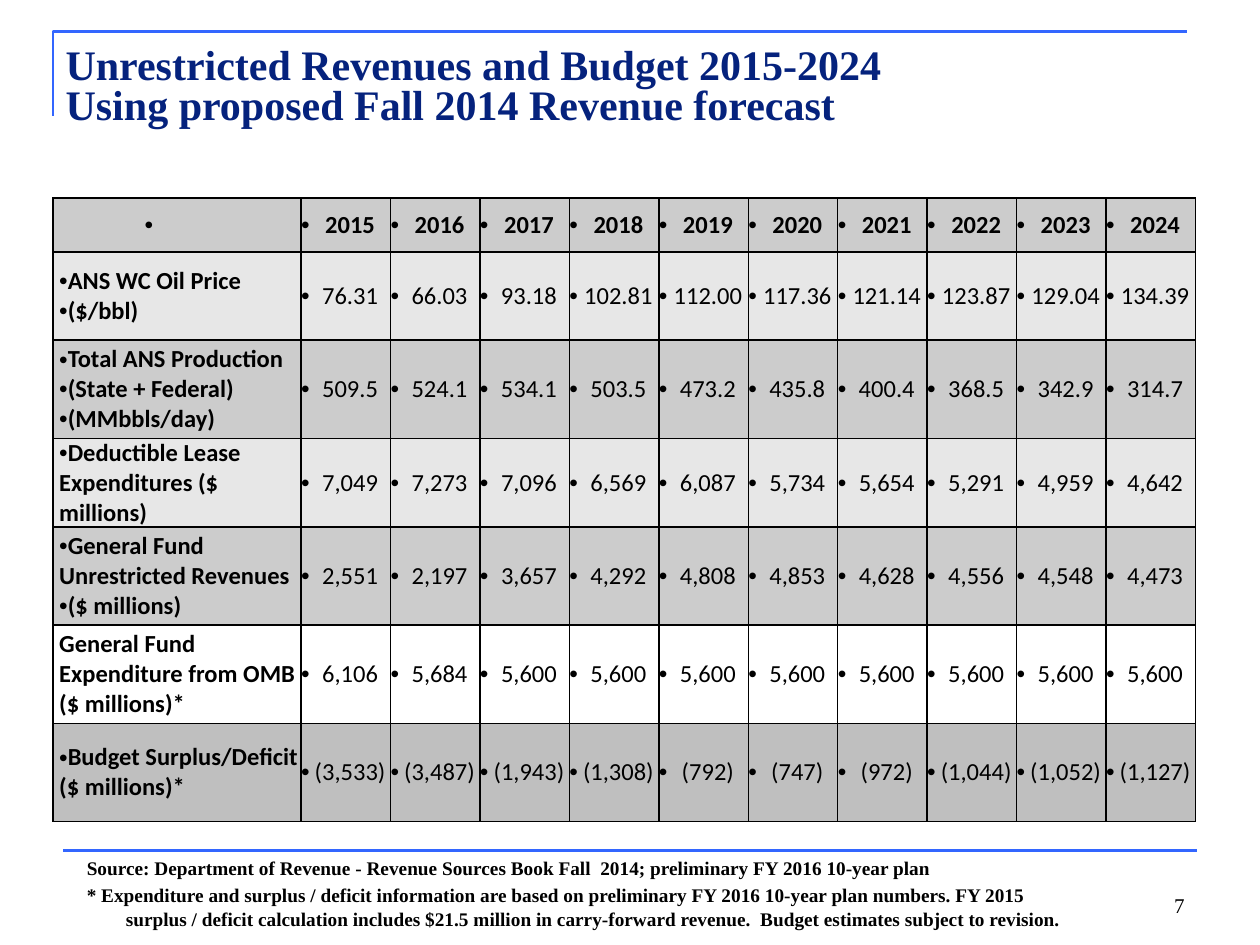
from lxml import etree
from pptx import Presentation
from pptx import util as u
from pptx.dml.color import RGBColor
from pptx.enum import text
from pptx.oxml import ns

BLUE = RGBColor(0x33, 0x66, 0xFF)
NAVY = RGBColor(0x05, 0x22, 0x7D)
BLACK = RGBColor(0, 0, 0)
WHITE = RGBColor(255, 255, 255)
LIGHT = RGBColor(0xE7, 0xE7, 0xE7)
GRAY = RGBColor(0xCC, 0xCC, 0xCC)
DARK = RGBColor(0xBF, 0xBF, 0xBF)

TITLE = "Unrestricted Revenues and Budget 2015-2024\nUsing proposed Fall 2014 Revenue forecast"
NOTES = (
    "Source: Department of Revenue - Revenue Sources Book Fall  2014; preliminary FY 2016 10-year plan\n"
    "* Expenditure and surplus / deficit information are based on preliminary FY 2016 10-year plan numbers. "
    "FY 2015 surplus / deficit calculation includes $21.5 million in carry-forward revenue.  "
    "Budget estimates subject to revision."
)
BUDGET_ROWS = [
    (" ", "2015 2016 2017 2018 2019 2020 2021 2022 2023 2024", GRAY, 0.43),
    ("ANS WC Oil Price\n($/bbl)",
     "76.31 66.03 93.18 102.81 112.00 117.36 121.14 123.87 129.04 134.39", LIGHT, 0.7),
    ("Total ANS Production\n(State + Federal)\n(MMbbls/day)",
     "509.5 524.1 534.1 503.5 473.2 435.8 400.4 368.5 342.9 314.7", GRAY, 0.78),
    ("Deductible Lease Expenditures ($ millions)",
     "7,049 7,273 7,096 6,569 6,087 5,734 5,654 5,291 4,959 4,642", LIGHT, 0.7),
    ("General Fund Unrestricted Revenues\n($ millions)",
     "2,551 2,197 3,657 4,292 4,808 4,853 4,628 4,556 4,548 4,473", GRAY, 0.78),
    ("General Fund Expenditure from OMB\n($ millions)*",
     "6,106 5,684 5,600 5,600 5,600 5,600 5,600 5,600 5,600 5,600", WHITE, 0.78),
    ("Budget Surplus/Deficit\v($ millions)*",
     "(3,533) (3,487) (1,943) (1,308) (792) (747) (972) (1,044) (1,052) (1,127)", DARK, 0.78),
]
EXPENDITURE_ROW = 5


class BudgetSlide:
    """Holds the style and the current slide, with one method per kind of element."""

    serif = "Times New Roman"
    sans = "Calibri"

    def __init__(self, deck):
        self.slide = deck.slides.add_slide(deck.slide_layouts[5])

    def style(self, paragraph, font, size, color=BLACK, bold=False, align=text.PP_ALIGN.LEFT):
        paragraph.alignment = align
        for run in paragraph.runs:
            run.font.name = font
            run.font.size = u.Pt(size)
            run.font.bold = bold
            run.font.color.rgb = color

    def indent(self, paragraph, left, first):
        properties = paragraph._p.get_or_add_pPr()
        properties.set("marL", str(u.Inches(left)))
        properties.set("indent", str(u.Inches(first)))
        return properties

    def bullet(self, paragraph, first):
        properties = self.indent(paragraph, 0, first)
        etree.SubElement(properties, ns.qn("a:buFont"), typeface="Arial")
        etree.SubElement(properties, ns.qn("a:buChar"), char="•")

    def title(self, wording, left, top, width, height):
        heading = self.slide.shapes.title
        heading.left, heading.top = u.Inches(left), u.Inches(top)
        heading.width, heading.height = u.Inches(width), u.Inches(height)
        frame = heading.text_frame
        frame.text = wording
        frame.vertical_anchor = text.MSO_ANCHOR.TOP
        frame.auto_size = text.MSO_AUTO_SIZE.SHAPE_TO_FIT_TEXT
        for paragraph in frame.paragraphs:
            self.style(paragraph, self.serif, 24, NAVY, True)
            paragraph.line_spacing = 0.8
            paragraph.space_before = u.Pt(0)

    def corner(self, left, top, right, bottom):
        builder = self.slide.shapes.build_freeform(u.Inches(left), u.Inches(bottom))
        points = [(left, top), (right, top)]
        builder.add_line_segments([(u.Inches(x), u.Inches(y)) for x, y in points], close=False)
        bracket = builder.convert_to_shape()
        bracket.shadow.inherit = False
        bracket.fill.background()
        self.stroke(bracket)

    def rule(self, left, right, y):
        line = self.slide.shapes.add_connector(1, u.Inches(left), u.Inches(y), u.Inches(right), u.Inches(y))
        etree.SubElement(line._element.spPr, ns.qn("a:effectLst"))
        self.stroke(line)

    def stroke(self, shape):
        shape.line.color.rgb = BLUE
        shape.line.width = u.Pt(1.5)

    def textbox(self, wording, left, top, width, height):
        box = self.slide.shapes.add_textbox(*map(u.Inches, (left, top, width, height)))
        frame = box.text_frame
        frame.word_wrap = True
        frame.text = wording
        return frame

    def footnotes(self, wording, *place):
        frame = self.textbox(wording, *place)
        frame.auto_size = text.MSO_AUTO_SIZE.SHAPE_TO_FIT_TEXT
        for paragraph in frame.paragraphs:
            self.style(paragraph, self.serif, 11, bold=True)
            self.indent(paragraph, 0.4, -0.31)
            paragraph.space_before = u.Pt(2.2)

    def page_number(self, number, *place):
        frame = self.textbox(number, *place)
        frame.vertical_anchor = text.MSO_ANCHOR.BOTTOM
        self.style(frame.paragraphs[0], self.serif, 12, align=text.PP_ALIGN.RIGHT)

    def cell(self, cell, wording, fill, bold, align, first=None, left=0.0):
        cell.text_frame.text = wording
        cell.vertical_anchor = text.MSO_ANCHOR.MIDDLE
        cell.margin_left = u.Inches(left)
        cell.margin_right = cell.margin_top = cell.margin_bottom = 0
        for paragraph in cell.text_frame.paragraphs:
            self.style(paragraph, self.sans, 14, bold=bold, align=align)
            if first is not None:
                self.bullet(paragraph, first)
        properties = cell._tc.get_or_add_tcPr()
        for side in ("lnL", "lnR", "lnT", "lnB"):
            border = etree.SubElement(properties, ns.qn(f"a:{side}"), w=str(u.Pt(1)))
            paint = etree.SubElement(border, ns.qn("a:solidFill"))
            etree.SubElement(paint, ns.qn("a:srgbClr"), val=str(BLACK))
        cell.fill.solid()
        cell.fill.fore_color.rgb = fill

    def table(self, rows, left, top, label_width, year_width):
        years = len(rows[0][1].split())
        width = label_width + years * year_width
        height = sum(row[3] for row in rows)
        place = map(u.Inches, (left, top, width, height))
        grid = self.slide.shapes.add_table(len(rows), years + 1, *place).table
        for index, column in enumerate(grid.columns):
            column.width = u.Inches(year_width if index else label_width)
        center = text.PP_ALIGN.CENTER
        for index, (label, values, fill, row_height) in enumerate(rows):
            grid.rows[index].height = u.Inches(row_height)
            if index == 0:
                self.cell(grid.cell(0, 0), label, fill, True, center, -0.27)
            else:
                first = None if index == EXPENDITURE_ROW else 0
                self.cell(grid.cell(index, 0), label, fill, True, text.PP_ALIGN.LEFT, first, 0.05)
            for year, value in enumerate(values.split(), 1):
                self.cell(grid.cell(index, year), value, fill, index == 0, center, -0.27)


def main():
    deck = Presentation()
    deck.slide_width, deck.slide_height = u.Inches(10), u.Inches(7.5)
    page = BudgetSlide(deck)
    page.corner(0.42, 0.25, 9.42, 0.92)
    page.rule(0.5, 9.5, 6.75)
    page.page_number("7", 7.17, 6.83, 2.33, 0.5)
    page.title(TITLE, 0.42, 0.33, 9.33, 0.76)
    page.footnotes(NOTES, 0.5, 6.75, 8.19, 0.69)
    page.table(BUDGET_ROWS, 0.42, 1.57, 1.97, 0.71)
    deck.save("out.pptx")


if __name__ == "__main__":
    main()
